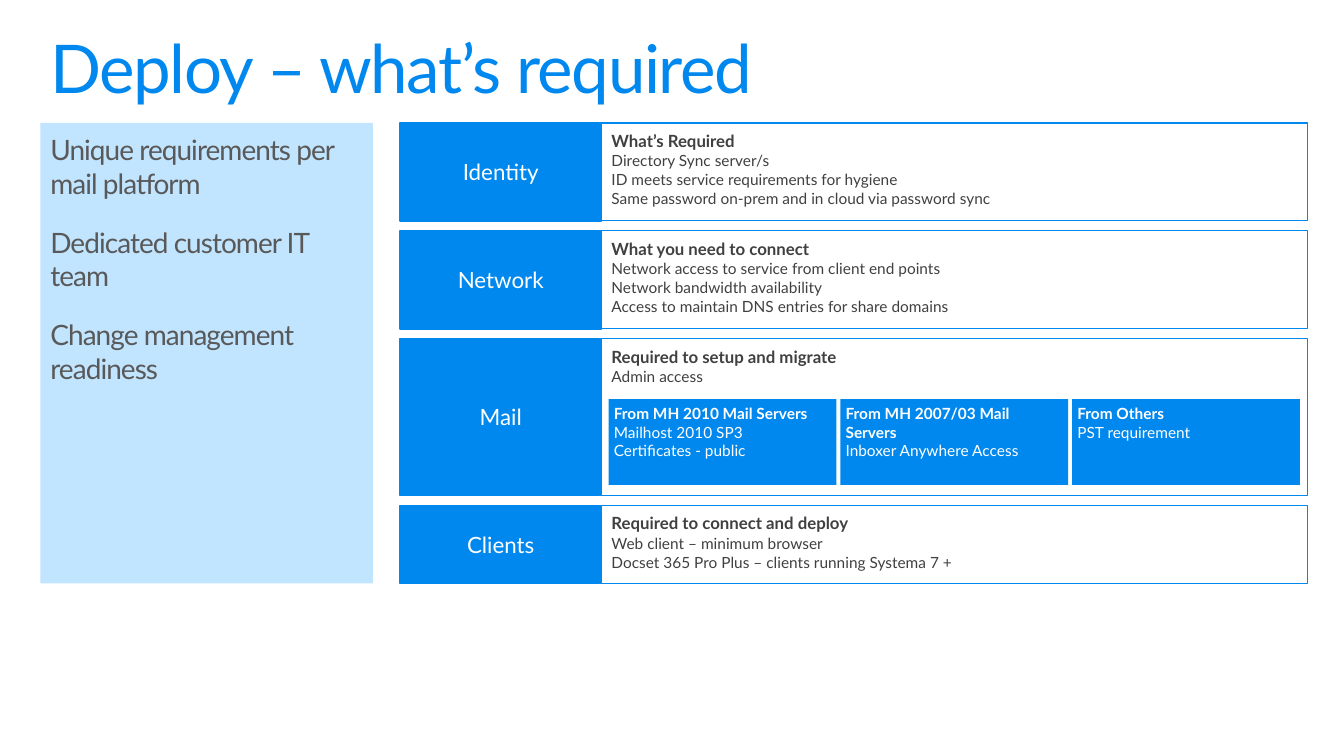
from pptx import Presentation
from pptx.dml.color import RGBColor
from pptx.enum.shapes import MSO_SHAPE
from pptx.enum.text import MSO_ANCHOR, PP_ALIGN
from pptx.util import Cm, Pt

COLOURS = {
    "blue": "0088EE",
    "pale": "C1E4FF",
    "white": "FFFFFF",
    "body": "404040",
    "grey": "595959",
}

# Row label, height in cm, heading, details
REQUIREMENTS = [
    ("Identity", 2.47, "What’s Required",
     ["Directory Sync server/s",
      "ID meets service requirements for hygiene",
      "Same password on-prem and in cloud via password sync"]),
    ("Network", 2.47, "What you need to connect",
     ["Network access to service from client end points",
      "Network bandwidth availability",
      "Access to maintain DNS entries for share domains"]),
    ("Mail", 3.94, "Required to setup and migrate", ["Admin access"]),
    ("Clients", 1.97, "Required to connect and deploy",
     ["Web client – minimum browser",
      "Docset 365 Pro Plus – clients running Systema 7 +"]),
]
MAIL_SOURCES = [
    ("From MH 2010 Mail Servers", ["Mailhost 2010 SP3", "Certificates - public"]),
    ("From MH 2007/03 Mail Servers", ["Inboxer Anywhere Access"]),
    ("From Others", ["PST requirement"]),
]
PREPARATION = [
    "Unique requirements per mail platform",
    "Dedicated customer IT team",
    "Change management readiness",
]

ROWS_TOP, ROW_GAP = 3.1, 0.25
LABEL_LEFT, LABEL_WIDTH = 10.08, 5.08
DETAIL_LEFT, DETAIL_WIDTH = LABEL_LEFT + LABEL_WIDTH, 17.78
CARD_LEFT, CARD_PITCH, CARD_WIDTH = 15.34, 5.84, 5.74


def rgb(name):
    return RGBColor.from_string(COLOURS[name])


def add_text(frame, text, size, colour, bold=False, align=PP_ALIGN.LEFT,
             line=1.0, after=0, tracking=0):
    """Fill the first paragraph if it is free, otherwise append one."""
    first = frame.paragraphs[0]
    paragraph = frame.add_paragraph() if first.runs else first
    paragraph.alignment = align
    paragraph.line_spacing = line
    paragraph.space_after = Pt(after)
    run = paragraph.add_run()
    run.text = text
    run.font.name = "Lato"
    run.font.size = Pt(size)
    run.font.bold = bold
    run.font.color.rgb = rgb(colour)
    if tracking:
        run.font._element.set("spc", str(round(tracking * 100)))


def set_frame(frame, inset, anchor=MSO_ANCHOR.TOP):
    frame.word_wrap = True
    frame.vertical_anchor = anchor
    frame.margin_left = frame.margin_right = Cm(inset)
    frame.margin_top = frame.margin_bottom = Cm(inset)


def add_box(shapes, left, top, width, height, fill=None, outline=None,
            inset=0.25, anchor=MSO_ANCHOR.TOP):
    box = shapes.add_shape(MSO_SHAPE.RECTANGLE, Cm(left), Cm(top),
                           Cm(width), Cm(height))
    box.shadow.inherit = False
    if fill:
        box.fill.solid()
        box.fill.fore_color.rgb = rgb(fill)
    else:
        box.fill.background()
    if outline:
        box.line.color.rgb = rgb("blue")
        box.line.width = Pt(outline)
    else:
        box.line.fill.background()
    set_frame(box.text_frame, inset, anchor)
    return box.text_frame


def add_title(shapes):
    title = shapes.add_textbox(Cm(1.02), Cm(0.76), Cm(30.96), Cm(2.08))
    set_frame(title.text_frame, 0.25)
    title.text_frame.margin_top = title.text_frame.margin_bottom = Cm(0.13)
    add_text(title.text_frame, "Deploy – what’s required", 48, "blue",
             line=0.9, tracking=-1)


def add_preparation(shapes):
    preparation = add_box(shapes, 1.02, ROWS_TOP, 8.38, 11.6, fill="pale")
    for need in PREPARATION:
        add_text(preparation, need, 20, "grey", after=18, tracking=-0.7)


def add_requirement(shapes, top, label, height, heading, details):
    name = add_box(shapes, LABEL_LEFT, top, LABEL_WIDTH, height, fill="blue",
                   outline=0.85, inset=0.18, anchor=MSO_ANCHOR.MIDDLE)
    name.margin_bottom = Cm(0.1)
    add_text(name, label, 16, "white", align=PP_ALIGN.CENTER, line=0.9)

    detail = add_box(shapes, DETAIL_LEFT, top, DETAIL_WIDTH, height, outline=0.75)
    add_text(detail, heading, 12, "body", bold=True, line=0.9, after=1.8)
    for item in details:
        add_text(detail, item, 11, "body", line=0.9, after=1.65)


def add_mail_sources(shapes):
    cards = shapes.add_group_shape().shapes
    for column, (heading, details) in enumerate(MAIL_SOURCES):
        card = add_box(cards, CARD_LEFT + column * CARD_PITCH, 10.06,
                       CARD_WIDTH, 2.16, fill="blue", inset=0.13)
        add_text(card, heading, 11, "white", bold=True)
        for item in details:
            add_text(card, item, 11, "white")


def main():
    deck = Presentation()
    deck.slide_width, deck.slide_height = Cm(33.87), Cm(19.05)
    shapes = deck.slides.add_slide(deck.slide_layouts[6]).shapes

    # Heading and side panel
    add_title(shapes)
    add_preparation(shapes)

    # Requirement rows, stacked with equal gaps
    top = ROWS_TOP
    for label, height, heading, details in REQUIREMENTS:
        add_requirement(shapes, top, label, height, heading, details)
        top += height + ROW_GAP

    # Cards inside the mail row
    add_mail_sources(shapes)

    deck.save("out.pptx")


if __name__ == "__main__":
    main()
